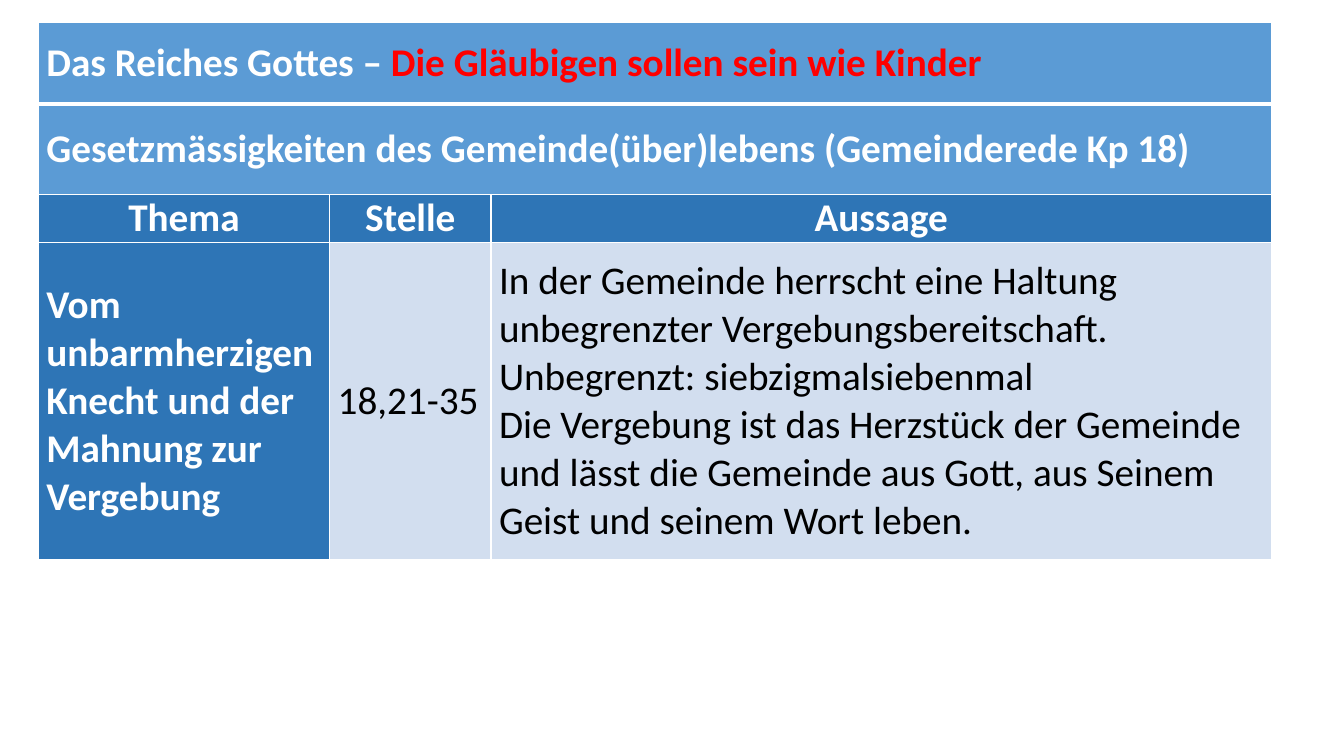
from dataclasses import dataclass

from lxml.etree import SubElement
from pptx import Presentation
from pptx.dml.color import RGBColor
from pptx.enum.text import MSO_ANCHOR as Anchor, PP_ALIGN as Align
from pptx.oxml.ns import qn
from pptx.util import Inches, Pt


@dataclass(frozen=True)
class Theme:
    font: str = "Calibri"
    size: int = 28
    white: str = "FFFFFF"
    black: str = "000000"
    red: str = "FF0000"
    band: str = "5B9BD5"
    head: str = "2E75B6"
    pale: str = "D2DEEF"
    thin: int = 1
    thick: int = 3


def write(para, text, *, font, size, color, bold=False, align=Align.LEFT):
    para.alignment = align
    run = para.add_run()
    run.text = text
    run.font.name = font
    run.font.size = Pt(size)
    run.font.bold = bold
    run.font.color.rgb = RGBColor.from_string(color)


def border(cell, color, widths):
    """Draw the left, right, top and bottom edges with widths in points."""
    props = cell._tc.get_or_add_tcPr()
    for i, (side, width) in enumerate(zip("LRTB", widths)):
        line = SubElement(props, qn(f"a:ln{side}"), w=str(Pt(width)))
        fill = SubElement(line, qn("a:solidFill"))
        SubElement(fill, qn("a:srgbClr"), val=color)
        props.insert(i, line)


class Page:
    def __init__(self, deck, theme):
        self.theme = theme
        self.slide = deck.slides.add_slide(deck.slide_layouts[6])

    def table(self, left, top, cols, rows):
        frame = self.slide.shapes.add_table(
            len(rows), len(cols), Inches(left), Inches(top),
            Inches(sum(cols)), Inches(sum(rows)))
        grid = frame.table
        grid.first_row = grid.horz_banding = False
        for col, width in zip(grid.columns, cols):
            col.width = Inches(width)
        for row, height in zip(grid.rows, rows):
            row.height = Inches(height)
        return grid

    def cell(self, cell, paras, fill, edges, **style):
        """Fill a cell; each paragraph is a list of (text, color) runs."""
        look = self.theme
        cell.fill.solid()
        cell.fill.fore_color.rgb = RGBColor.from_string(fill)
        cell.vertical_anchor = Anchor.MIDDLE
        cell.margin_left = cell.margin_right = Inches(0.08)
        cell.margin_top = cell.margin_bottom = 0
        border(cell, look.white, edges)
        frame = cell.text_frame
        for i, runs in enumerate(paras):
            para = frame.add_paragraph() if i else frame.paragraphs[0]
            for text, color in runs:
                write(para, text, font=look.font, size=look.size,
                      color=color, **style)


def main():
    look = Theme()
    deck = Presentation()
    deck.slide_width, deck.slide_height = Inches(13.33), Inches(7.5)
    page = Page(deck, look)
    grid = page.table(0.38, 0.22, [2.89, 1.6, 7.74], [0.81, 0.9, 0.47, 3.15])

    thin, thick = look.thin, look.thick
    plain = (thin,) * 4
    bands = [
        ([("Das Reiches Gottes – ", look.white),
          ("Die Gläubigen sollen sein wie Kinder", look.red)],
         (thin, thin, thin, thick)),
        ([("Gesetzmässigkeiten des Gemeinde(über)lebens (Gemeinderede Kp 18)",
           look.white)],
         (thin, thin, thick, thin)),
    ]
    for r, (runs, edges) in enumerate(bands):
        for c in range(3):
            page.cell(grid.cell(r, c), [] if c else [runs], look.band, edges,
                      bold=True)
        grid.cell(r, 0).merge(grid.cell(r, 2))

    for c, label in enumerate(["Thema", "Stelle", "Aussage"]):
        page.cell(grid.cell(2, c), [[(label, look.white)]], look.head, plain,
                  bold=True, align=Align.CENTER)

    topic = "Vom unbarmherzigen Knecht und der Mahnung zur Vergebung"
    page.cell(grid.cell(3, 0), [[(topic, look.white)]], look.head, plain,
              bold=True)
    body = [
        ["18,21-35"],
        ["In der Gemeinde herrscht eine Haltung unbegrenzter "
         "Vergebungsbereitschaft.",
         "Unbegrenzt: siebzigmalsiebenmal",
         "Die Vergebung ist das Herzstück der Gemeinde und lässt die Gemeinde "
         "aus Gott, aus Seinem Geist und seinem Wort leben."],
    ]
    for c, lines in enumerate(body, 1):
        page.cell(grid.cell(3, c), [[(line, look.black)] for line in lines],
                  look.pale, plain)

    deck.save("out.pptx")


if __name__ == "__main__":
    main()
